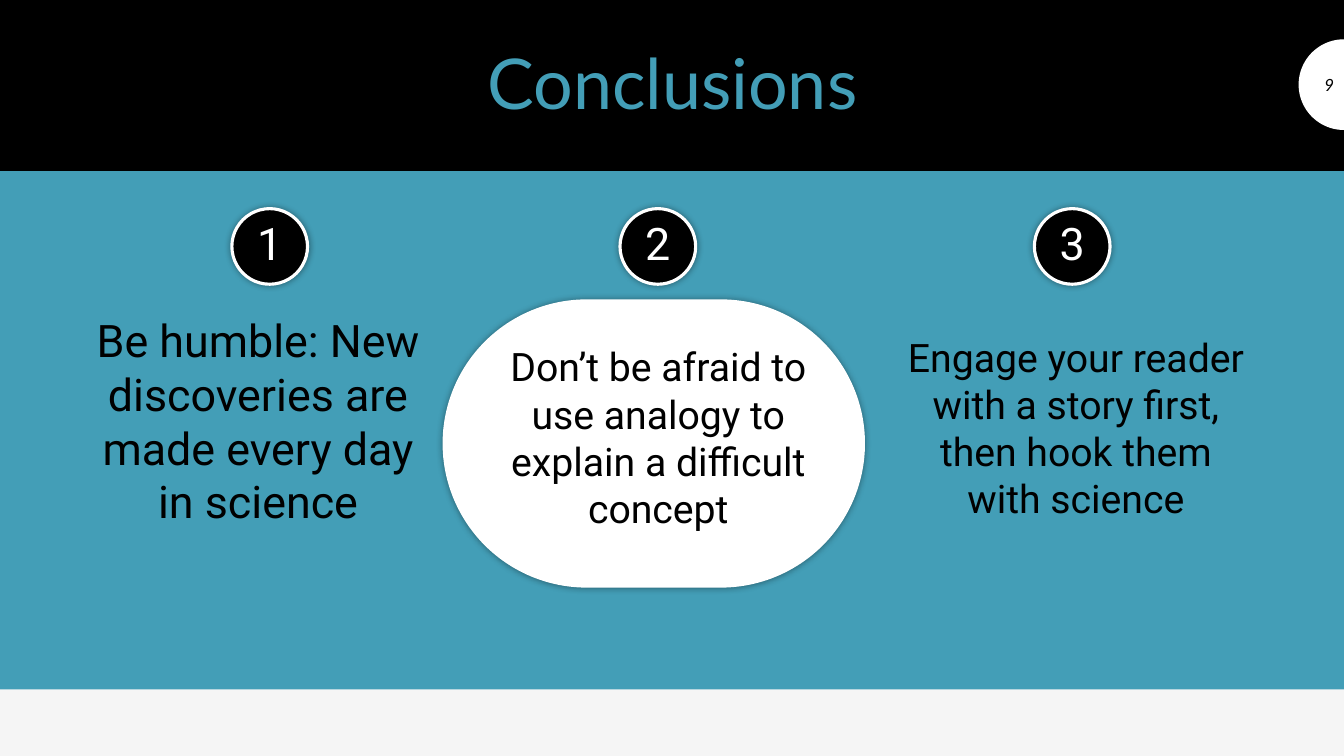
from math import cos, pi, sin

from lxml.etree import SubElement
from pptx import Presentation
from pptx.dml.color import RGBColor
from pptx.enum.shapes import MSO_SHAPE
from pptx.enum.text import MSO_ANCHOR, PP_ALIGN
from pptx.oxml.ns import qn
from pptx.util import Inches, Pt

COLORS = {"page": "F5F5F5", "teal": "439EB7", "black": "000000", "white": "FFFFFF"}


def tint(name):
    return RGBColor.from_string(COLORS[name])


class Deck:
    """Draws on one slide; lengths are percentages of its width and height."""

    def __init__(self):
        self.file = Presentation()
        self.file.slide_width = Inches(13.33)
        self.file.slide_height = Inches(7.5)
        self.slide = self.file.slides.add_slide(self.file.slide_layouts[6])
        self.slide.background.fill.solid()
        self.slide.background.fill.fore_color.rgb = tint("page")

    def place(self, x, y, w, h):
        wide, high = self.file.slide_width, self.file.slide_height
        return [round(part * size / 100)
                for part, size in ((x, wide), (y, high), (w, wide), (h, high))]

    def paint(self, shape, fill, line=None, width=1):
        shape.shadow.inherit = False
        shape.fill.solid()
        shape.fill.fore_color.rgb = tint(fill)
        if line:
            shape.line.color.rgb = tint(line)
            shape.line.width = Pt(width)
        else:
            shape.line.fill.background()
        return shape

    def shape(self, kind, box, fill, line=None, width=1):
        shape = self.slide.shapes.add_shape(kind, *self.place(*box))
        return self.paint(shape, fill, line, width)

    def glow(self, shape):
        """Add a soft dark shadow on all sides."""
        effects = shape.element.spPr.find(qn("a:effectLst"))
        outer = SubElement(effects, qn("a:outerShdw"), blurRad=str(Pt(5)),
                           dist="0", dir="0", algn="ctr", rotWithShape="0")
        shade = SubElement(outer, qn("a:srgbClr"), val=COLORS["black"])
        SubElement(shade, qn("a:alpha"), val="40000")

    def label(self, shape, words, size, color, font="Roboto",
              align=PP_ALIGN.CENTER, space=1.0, slant=False):
        frame = shape.text_frame
        frame.word_wrap = True
        frame.vertical_anchor = MSO_ANCHOR.MIDDLE
        line = frame.paragraphs[0]
        line.text = words
        line.alignment = align
        line.line_spacing = space
        line.font.name = font
        line.font.size = Pt(size)
        line.font.italic = slant
        line.font.color.rgb = tint(color)

    def text(self, box, words, size, color, **style):
        shape = self.slide.shapes.add_textbox(*self.place(*box))
        self.label(shape, words, size, color, **style)

    def badge(self, mid, number):
        """Draw a numbered circle centred on the column at mid."""
        wide = 5.63
        disc = self.shape(MSO_SHAPE.OVAL, (mid - wide / 2, 27.6, wide, 10),
                          "black", "white", 2.25)
        self.glow(disc)
        self.label(disc, number, 32, "white")
        frame = disc.text_frame
        frame.word_wrap = False
        frame.margin_left = frame.margin_right = frame.margin_top = 0
        frame.margin_bottom = Inches(0.07)

    def tab(self, mid, radius, fill):
        """Draw a half disc against the right edge, centred on the row at mid."""
        edge, row, _, size = self.place(100, mid, 0, radius)
        steps = 48
        arc = [(edge - size * sin(pi * i / steps), row - size * cos(pi * i / steps))
               for i in range(steps + 1)]
        form = self.slide.shapes.build_freeform(*arc[0])
        form.add_line_segments(arc[1:], close=True)
        self.paint(form.convert_to_shape(), fill)


def main():
    deck = Deck()
    deck.shape(MSO_SHAPE.RECTANGLE, (0, 22.4, 100, 68.8), "teal")
    deck.shape(MSO_SHAPE.RECTANGLE, (0, 0, 100, 22.53), "black", "black")
    deck.tab(11.2, 6, "white")
    deck.text((96.7, 8.53, 3.3, 5.33), "9", 12, "black", font="Lato",
              align=PP_ALIGN.RIGHT, slant=True)
    deck.text((6.23, 4.13, 87.62, 14.67), "Conclusions", 50, "teal",
              font="Lato", space=0.9)

    pill = deck.shape(MSO_SHAPE.ROUNDED_RECTANGLE, (32.93, 39.6, 31.43, 38.13), "white")
    pill.adjustments[0] = 0.5
    deck.glow(pill)

    points = [
        (20.07, (5.48, 40.93, 27.46, 29.33), 32,
         "Be humble: New discoveries are made every day in science"),
        (48.95, (37.13, 44.53, 23.7, 26.53), 28,
         "Don’t be afraid to use analogy to explain a difficult concept"),
        (79.78, (66.32, 41.87, 27.46, 29.33), 28,
         "Engage your reader with a story first, then hook them with science"),
    ]
    for rank, (mid, box, size, words) in enumerate(points, 1):
        deck.badge(mid, str(rank))
        deck.text(box, words, size, "black")

    deck.file.save("out.pptx")


if __name__ == "__main__":
    main()
